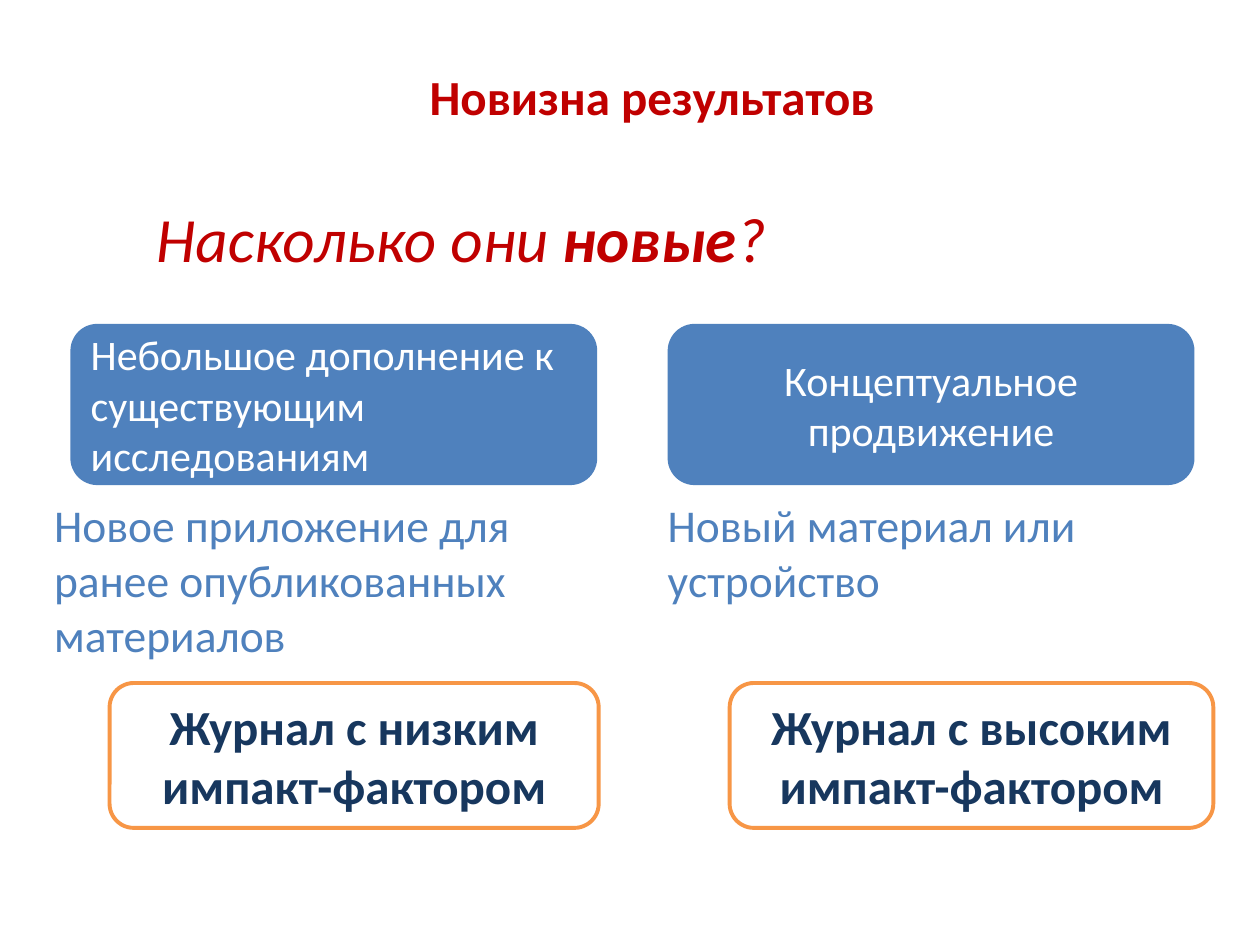
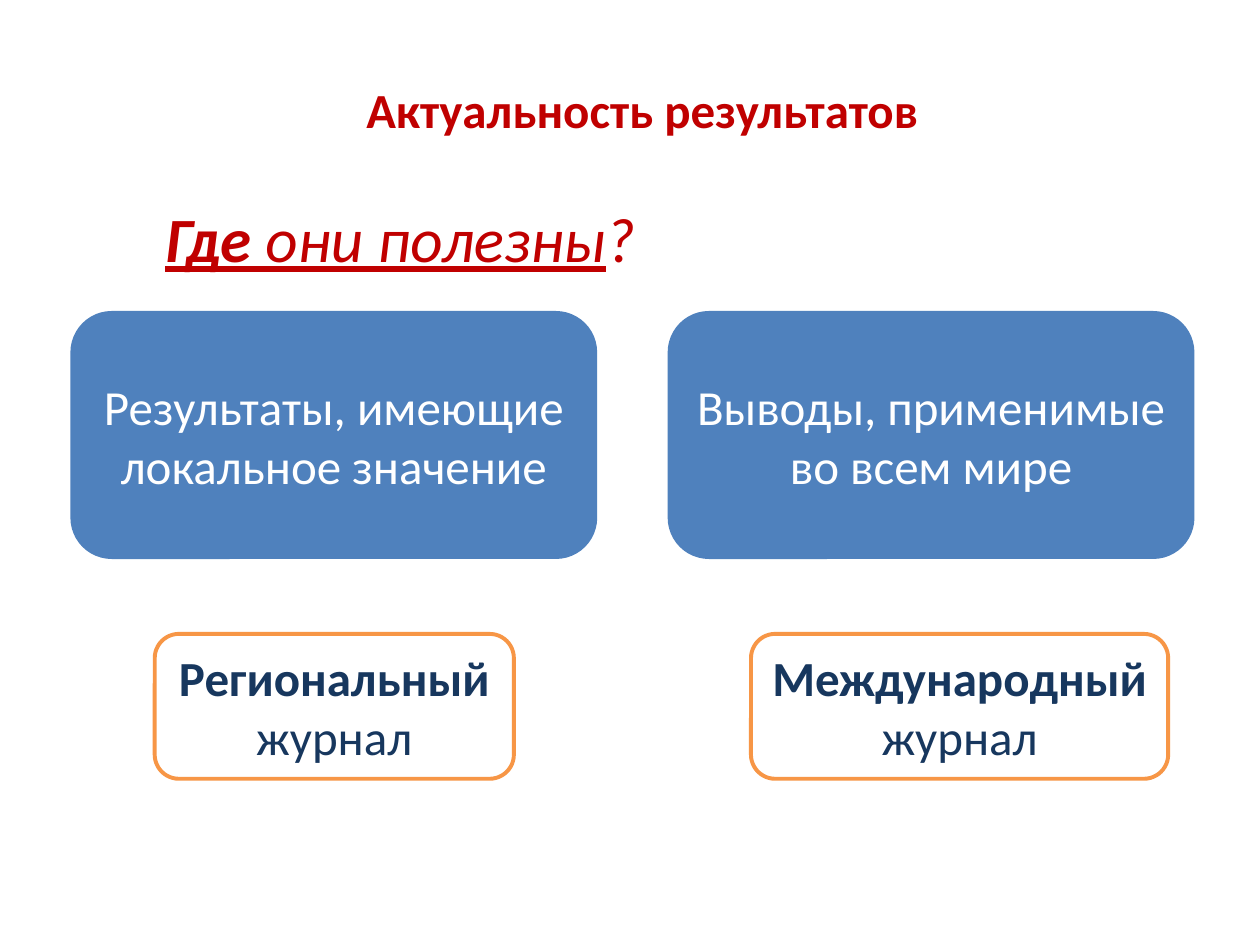
from pptx import Presentation
from pptx.dml.color import RGBColor
from pptx.enum.shapes import MSO_SHAPE as Shape
from pptx.enum.text import MSO_ANCHOR as Anchor, MSO_AUTO_SIZE as AutoSize, PP_ALIGN as Align
from pptx.util import Cm, Pt

FONT = "Calibri"
COLORS = {
    "accent": "C00000",
    "blue": "4F81BD",
    "navy": "17375E",
    "orange": "F79646",
    "white": "FFFFFF",
}
COLUMN_LEFTS = (1.42, 13.46)
COLUMN_WIDTH = 10.62
JOURNAL_HEIGHT = 2.92
TITLE_ONLY_LAYOUT = 5


def color(name):
    return RGBColor.from_string(COLORS[name])


def write(text_frame, runs, size, color_name, align=Align.LEFT, before=0, line_spacing=None):
    """Fill one paragraph; runs are (text, style letters from "biu") pairs."""
    text_frame.word_wrap = True
    text_frame.auto_size = AutoSize.NONE
    paragraph = text_frame.paragraphs[0]
    paragraph.alignment = align
    paragraph.space_before = Pt(before)
    paragraph.line_spacing = line_spacing
    for text, style in runs:
        run = paragraph.add_run()
        run.text = text
        font = run.font
        font.name, font.size = FONT, Pt(size)
        font.color.rgb = color(color_name)
        font.bold, font.italic, font.underline = (letter in style for letter in "biu")


def remove_margins(text_frame):
    text_frame.margin_left = text_frame.margin_right = 0
    text_frame.margin_top = text_frame.margin_bottom = 0


def add_title(slide, box, text, anchor, line_spacing):
    title = slide.shapes.title
    title.left, title.top, title.width, title.height = map(Cm, box)
    remove_margins(title.text_frame)
    title.text_frame.vertical_anchor = anchor
    write(title.text_frame, [(text, "b")], 28, "accent", Align.CENTER,
          line_spacing=line_spacing)


def add_plain_text(slide, box, runs, size, color_name, line_spacing=None):
    text_frame = slide.shapes.add_textbox(*map(Cm, box)).text_frame
    remove_margins(text_frame)
    write(text_frame, runs, size, color_name, before=9, line_spacing=line_spacing)


def add_question(slide, left, runs):
    add_plain_text(slide, (left, 4.78, 18.75, 2), runs, 36, "accent", Pt(22))


def add_rounded_box(slide, box, fill, line=None):
    shape = slide.shapes.add_shape(Shape.ROUNDED_RECTANGLE, *map(Cm, box))
    shape.shadow.inherit = False
    shape.fill.solid()
    shape.fill.fore_color.rgb = color(fill)
    if line:
        shape.line.color.rgb = color(line)
        shape.line.width = Pt(2.25)
    else:
        shape.line.fill.background()
    return shape.text_frame


def add_result(slide, box, text, size, align=Align.CENTER):
    text_frame = add_rounded_box(slide, box, "blue")
    text_frame.vertical_anchor = Anchor.MIDDLE
    write(text_frame, [(text, "")], size, "white", align, before=7)


def add_journal(slide, box, runs):
    text_frame = add_rounded_box(slide, box, "white", "orange")
    text_frame.vertical_anchor = Anchor.TOP
    write(text_frame, runs, 28, "navy", Align.CENTER, before=7)


def add_novelty_slide(presentation):
    slide = presentation.slides.add_slide(presentation.slide_layouts[TITLE_ONLY_LAYOUT])
    add_title(slide, (0.89, 1.52, 24.51, 0.84), "Новизна результатов", Anchor.MIDDLE, 1.0)
    add_question(slide, 3.15, [("Насколько они ", "i"), ("новые", "bi"), ("?", "i")])

    results = (("Небольшое дополнение к существующим исследованиям", Align.LEFT),
               ("Концептуальное продвижение", Align.CENTER))
    for left, (text, align) in zip(COLUMN_LEFTS, results):
        add_result(slide, (left, 6.53, COLUMN_WIDTH, 3.25), text, 24, align)

    examples = (((1.09, 10.03, 11.35, 1.75), "Новое приложение для ранее опубликованных материалов"),
                ((13.46, 10.03, 10.62, 2.49), "Новый материал или устройство"))
    for box, text in examples:
        add_plain_text(slide, box, [(text, "")], 26, "blue")

    journals = ((2.21, 9.86, "низким"), (14.71, 9.75, "высоким"))
    for left, width, level in journals:
        add_journal(slide, (left, 13.77, width, JOURNAL_HEIGHT),
                    [(f"Журнал с {level} импакт-фактором", "b")])


def add_relevance_slide(presentation):
    slide = presentation.slides.add_slide(presentation.slide_layouts[TITLE_ONLY_LAYOUT])
    add_title(slide, (0.69, 1.73, 24.51, 1.55), "Актуальность результатов", Anchor.TOP, 0.9)
    add_question(slide, 3.33, [("Где ", "biu"), ("они полезны", "iu"), ("?", "i")])

    results = ("Результаты, имеющие локальное значение", "Выводы, применимые во всем мире")
    for left, text in zip(COLUMN_LEFTS, results):
        add_result(slide, (left, 6.27, COLUMN_WIDTH, 5), text, 28)

    journals = ((3.12, 7.24, "Региональный "), (15.14, 8.41, "Международный "))
    for left, width, scope in journals:
        add_journal(slide, (left, 12.78, width, JOURNAL_HEIGHT), [(scope, "b"), ("журнал", "")])


def main():
    presentation = Presentation()
    presentation.slide_width, presentation.slide_height = Cm(25.4), Cm(19.05)
    add_novelty_slide(presentation)
    add_relevance_slide(presentation)
    presentation.save("out.pptx")


if __name__ == "__main__":
    main()
